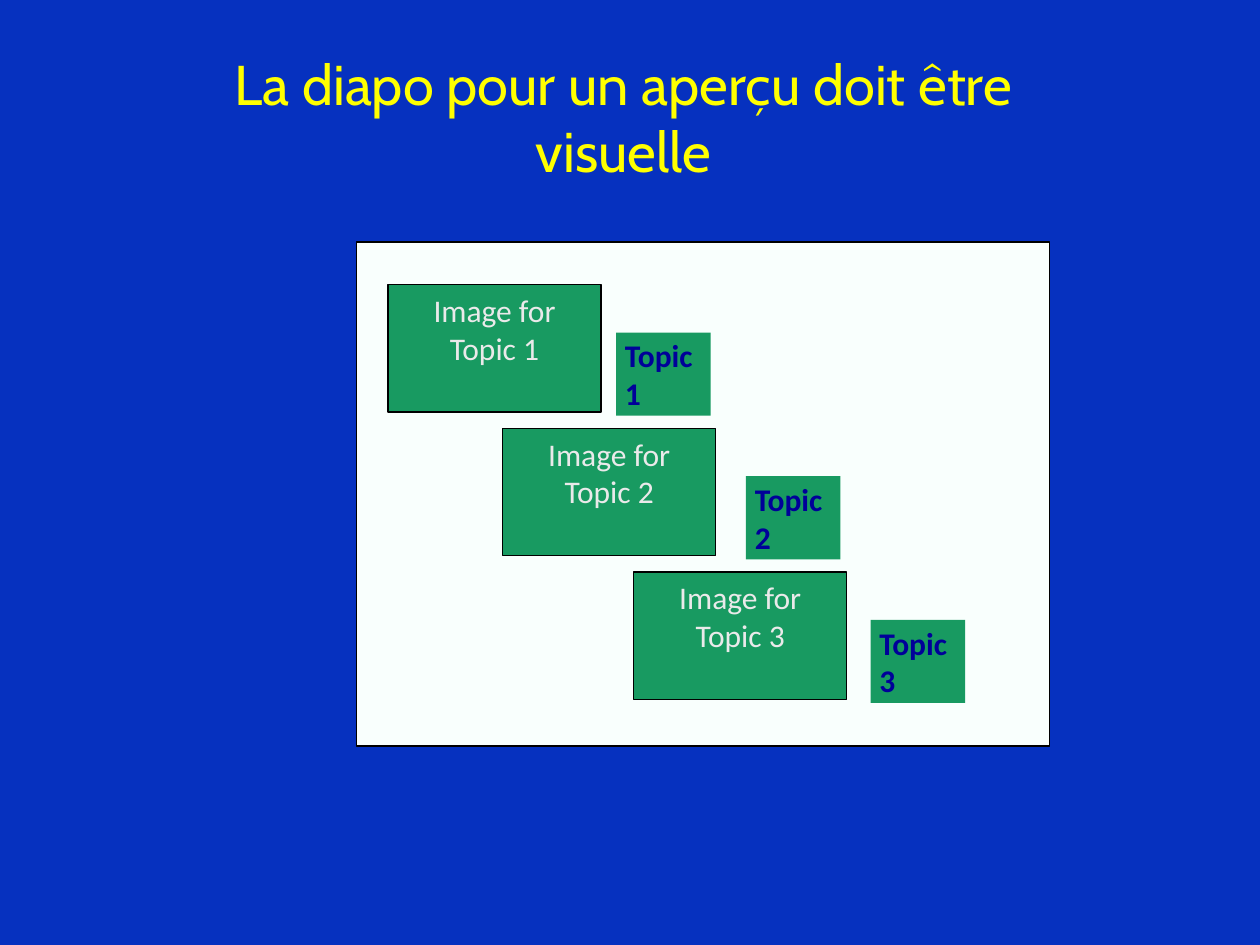
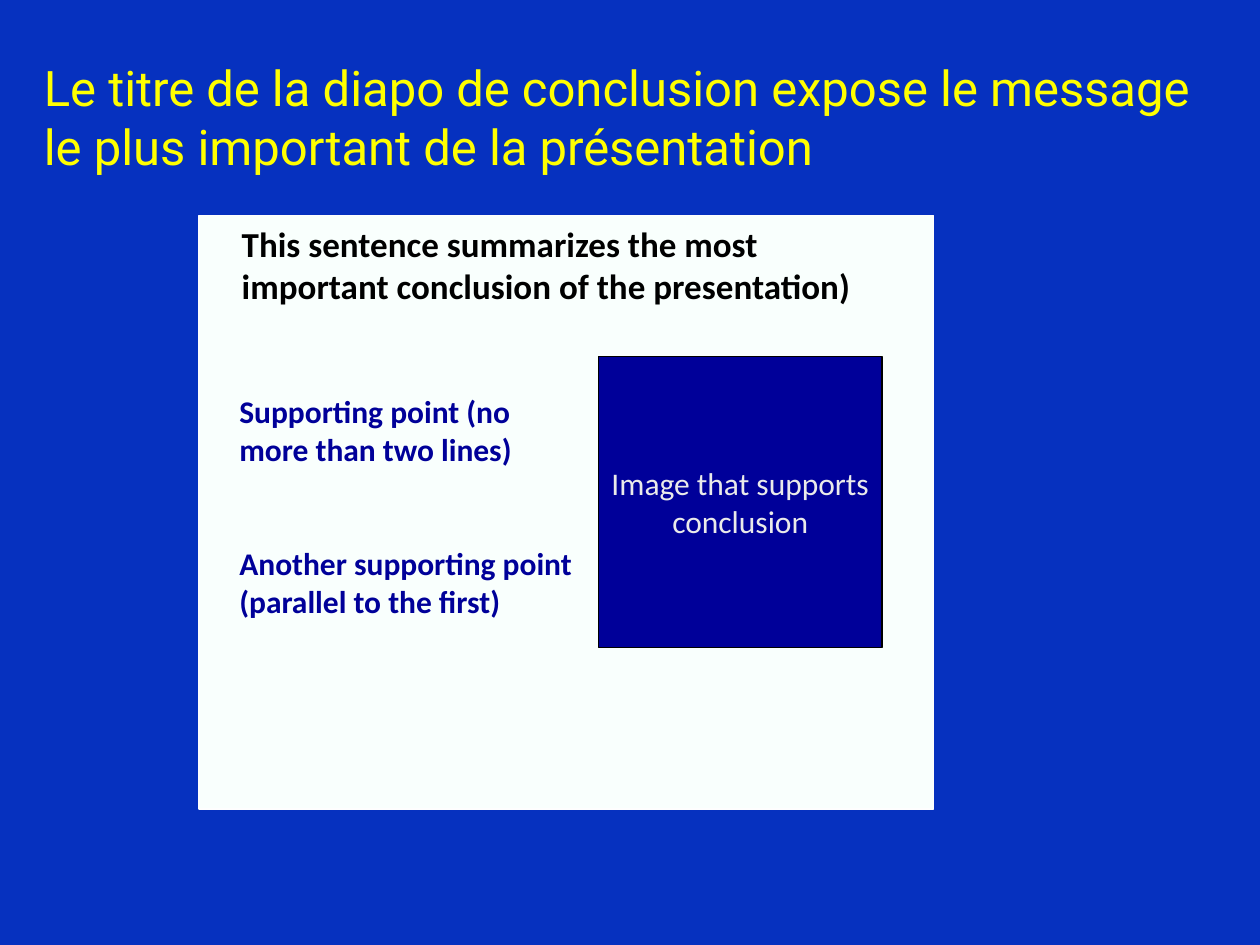
from pptx import Presentation
from pptx.dml.color import RGBColor
from pptx.enum.shapes import MSO_SHAPE
from pptx.enum.text import MSO_ANCHOR, PP_ALIGN
from pptx.util import Inches, Pt

RECTANGLE = MSO_SHAPE.RECTANGLE
TOP, MIDDLE = MSO_ANCHOR.TOP, MSO_ANCHOR.MIDDLE
LEFT, CENTER = PP_ALIGN.LEFT, PP_ALIGN.CENTER

# Content
OVERVIEW_TITLE = "La diapo pour un aperçu doit être \vvisuelle "
TOPICS = [  # topic, left of image, left of label
    ("Topic 1", 3.08, 4.89),
    ("Topic 2", 3.99, 5.92),
    ("Topic 3", 5.03, 6.91),
]
CONCLUSION_TITLE = ("Le titre de la diapo de conclusion expose le message "
                    "le plus important de la présentation")
CONCLUSION = "This sentence summarizes the most important conclusion of the presentation)"
SUPPORTING_POINTS = [
    "Supporting point (no more than two lines)",
    "Another supporting point (parallel to the first)",
]
CONCLUSION_IMAGE = "Image that supports conclusion"

# Shared style
BLUE, YELLOW, PANEL, GREEN = "0631BF", "FFFF00", "F9FFFD", "189A61"
NAVY, PALE, BLACK, WHITE = "000099", "EAEAEA", "000000", "FEFEFE"
BODY_FONT = "Calibri"
TIGHT = (0.07, 0.03)

# Topic staircase
FIRST_TOP, ROW_STEP, LABEL_DROP = 2.26, 1.14, 0.38


def color(hex_string):
    return RGBColor.from_string(hex_string)


def write(shape, paragraphs, size, text_color, font=BODY_FONT, bold=False,
          align=LEFT, anchor=TOP, insets=(0.1, 0.05), gap=0):
    frame = shape.text_frame
    frame.word_wrap = True
    frame.vertical_anchor = anchor
    frame.margin_left = frame.margin_right = Inches(insets[0])
    frame.margin_top = frame.margin_bottom = Inches(insets[1])
    frame.text = "\n".join(paragraphs)
    for index, paragraph in enumerate(frame.paragraphs):
        paragraph.alignment = align
        if index and gap:
            paragraph.space_before = Pt(gap)
        for run in paragraph.runs:
            run.font.name = font
            run.font.size = Pt(size)
            run.font.bold = bold
            run.font.color.rgb = color(text_color)


def add_text(slide, box, paragraphs, size, text_color, **style):
    shape = slide.shapes.add_textbox(*map(Inches, box))
    write(shape, paragraphs, size, text_color, **style)


def add_box(slide, box, fill, line=None, width=0.75):
    shape = slide.shapes.add_shape(RECTANGLE, *map(Inches, box))
    shape.shadow.inherit = False
    shape.fill.solid()
    shape.fill.fore_color.rgb = color(fill)
    if line:
        shape.line.color.rgb = color(line)
        shape.line.width = Pt(width)
    else:
        shape.line.fill.background()
    return shape


def add_slide(presentation, title, size, font, align):
    slide = presentation.slides.add_slide(presentation.slide_layouts[6])
    slide.background.fill.solid()
    slide.background.fill.fore_color.rgb = color(BLUE)
    add_text(slide, (0.25, 0.3, 9.5, 1.25), [title], size, YELLOW,
             font=font, align=align, anchor=MIDDLE)
    return slide


def build_overview(presentation):
    slide = add_slide(presentation, OVERVIEW_TITLE, 32, "Cabin", CENTER)
    add_box(slide, (2.83, 1.92, 5.5, 4), PANEL, BLACK, 1)
    for row, (topic, image_left, label_left) in enumerate(TOPICS):
        top = FIRST_TOP + row * ROW_STEP
        label = add_box(slide, (label_left, top + LABEL_DROP, 0.75, 0.66), GREEN)
        write(label, [topic], 18, NAVY, bold=True, insets=TIGHT)
        image = add_box(slide, (image_left, top, 1.69, 1.01), GREEN, BLACK)
        write(image, ["Image for", topic], 18, PALE, align=CENTER)


def build_conclusion(presentation):
    slide = add_slide(presentation, CONCLUSION_TITLE, 28, "Roboto", LEFT)
    add_box(slide, (1.58, 1.71, 5.83, 4.71), PANEL, WHITE, 1)
    add_text(slide, (1.83, 3.08, 2.83, 1.86), SUPPORTING_POINTS, 18, NAVY,
             bold=True, insets=TIGHT, gap=44)
    image = add_box(slide, (4.75, 2.83, 2.25, 2.31), NAVY, BLACK)
    write(image, [CONCLUSION_IMAGE], 18, PALE, align=CENTER, anchor=MIDDLE,
          insets=(0.05, 0.05))
    add_text(slide, (1.82, 1.72, 5.52, 1.17), [CONCLUSION], 20, BLACK, bold=True)


def main():
    presentation = Presentation()
    presentation.slide_width = Inches(10)
    presentation.slide_height = Inches(7.5)
    build_overview(presentation)
    build_conclusion(presentation)
    presentation.save("out.pptx")


if __name__ == "__main__":
    main()
